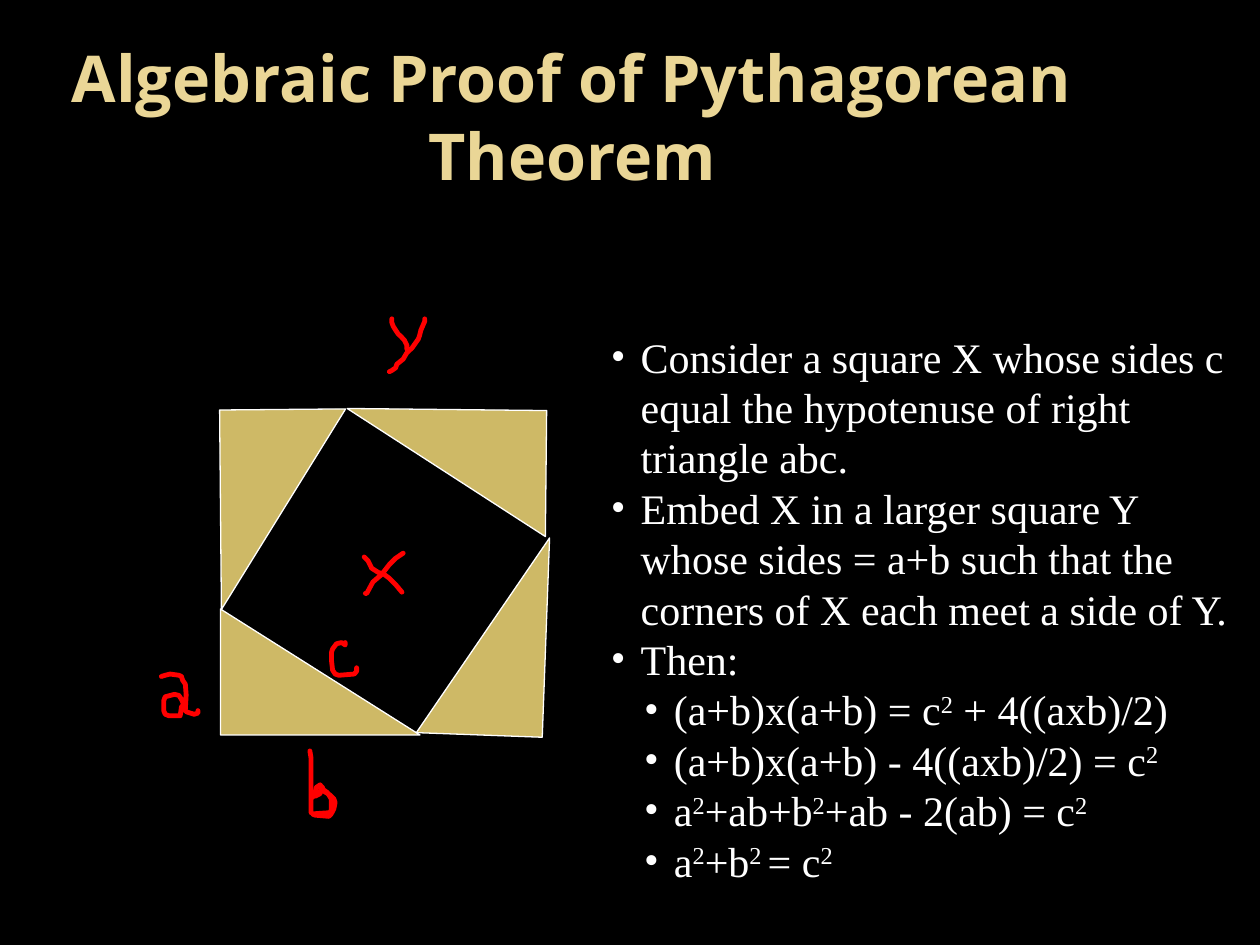
from pptx import Presentation
from pptx.dml.color import RGBColor
from pptx.enum.shapes import MSO_SHAPE as Shape
from pptx.enum.text import MSO_ANCHOR as Anchor, PP_ALIGN as Align
from pptx.oxml.ns import qn
from pptx.util import Pt
from lxml.etree import SubElement

COLORS = {"back": "000000", "title": "EAD696", "text": "FFFFFF",
          "triangle": "CEB966", "ink": "FF0000"}

TITLE = "Algebraic Proof of Pythagorean Theorem"
STEPS = [
    (0, "Consider a square X whose sides c equal the hypotenuse of right triangle abc."),
    (0, "Embed X in a larger square Y whose sides = a+b such that the corners of X each meet a side of Y."),
    (0, "Then:"),
    (1, "(a+b)x(a+b) = c|2| + 4((axb)/2)"),
    (1, "(a+b)x(a+b) - 4((axb)/2) = c|2"),
    (1, "a|2|+ab+b|2|+ab - 2(ab) = c|2"),
    (1, "a|2|+b|2 |= c|2"),
]
ANGLES = [0, 89.5, 180.6, 272.1]

LETTERS = {
    "X": (208.1, 316.1, [
        [(22.3, 0), (18, 2.9), (14.4, 6.5), (10, 12.2), (5, 16.5), (1.5, 23), (0.7, 23)],
        [(0, 2.2), (2.2, 4.3), (4.3, 8.6), (8, 11), (11.5, 12.2), (14.4, 14.4),
         (18, 18), (21.6, 22.3)]]),
    "c": (189.4, 367.2, [
        [(7.9, 0), (7.9, 1.4), (5.8, 0), (2.9, 0.7), (0.7, 3.6), (0, 5.8), (0, 10),
         (0.7, 15.8), (2.2, 18), (4.3, 18.7), (13, 18), (14.4, 16.5), (14.4, 14.4)]]),
    "b": (177.1, 429.1, [
        [(0, 0), (0.7, 4.3), (0.7, 35.3)],
        [(1.4, 26.6), (2.9, 24.5), (3.6, 20.9), (5.8, 19.4), (7.2, 20.9), (7.9, 23),
         (11.5, 25.2), (13.7, 27.4), (14.4, 29.5), (13.7, 33.1), (12.2, 36),
         (10.8, 37.4), (2.9, 36.7), (1.4, 36), (11.5, 35.3), (12.2, 33.8),
         (12.2, 27.4), (10, 23.8), (7.9, 22.3), (6.5, 21.6), (5.8, 24.5), (2.9, 25.9)]]),
    "a": (92.2, 385.2, [
        [(0, 1.4), (2.2, 0.7), (5, 0), (10, 0.7), (11.5, 1.4), (12.2, 3.6), (13.7, 5.8),
         (14.2, 12), (13.7, 20.2), (13, 18), (11.5, 14.4), (10, 12.2), (7.5, 11.6),
         (2.2, 13), (1.4, 15.1), (1.4, 21), (2.2, 23), (4.3, 23.8), (10.8, 23.8),
         (11.5, 18.7), (12.2, 18), (13, 20.2), (14.4, 21.6), (16.6, 22.3), (18.7, 23),
         (20.9, 22.3), (20.9, 20.9)]]),
    "y short": (222.5, 182.2, [
        [(1.4, 0), (1.4, 2.2), (2.2, 4.3), (3.6, 6.5), (5, 8.6), (6.5, 10),
         (8.6, 12.2), (10, 15.1), (10, 17.3)]]),
    "y long": (222.5, 182.2, [
        [(20.2, 0), (20.2, 1.4), (18, 6.5), (17.3, 9.4), (16.6, 11.5), (13, 16.6),
         (10, 19.4), (7.9, 23), (4.3, 25.9), (3.6, 28), (1.4, 29.5), (0, 30.2)]]),
}


def color(name):
    """Return the named colour."""
    return RGBColor.from_string(COLORS[name])


def set_font(para, face, size, name, bold=False):
    """Set the font of a paragraph and of the runs in it."""
    for part in (para, *para.runs):
        font = part.font
        font.name, font.size, font.bold = face, Pt(size), bold
        font.color.rgb = color(name)


def add_box(page, left, top, width, height):
    """Add a wrapping text box and return its frame."""
    frame = page.shapes.add_textbox(Pt(left), Pt(top), Pt(width), Pt(height)).text_frame
    frame.word_wrap = True
    return frame


def add_title(page, left, top, width, height):
    """Place the centred title."""
    frame = add_box(page, left, top, width, height)
    frame.vertical_anchor = Anchor.MIDDLE
    para = frame.paragraphs[0]
    para.text = TITLE
    para.alignment = Align.CENTER
    set_font(para, "Open Sans", 36.9, "title", True)


def add_bullet(para, level):
    """Give a paragraph a hanging bullet for its level."""
    para.level = level
    props = para._p.get_or_add_pPr()
    props.set("marL", str(Pt(17 + 19 * level)))
    props.set("indent", str(Pt(-17)))
    SubElement(props, qn("a:buFont")).set("typeface", "Times New Roman")
    SubElement(props, qn("a:buChar")).set("char", "•")


def add_steps(page, left, top, width, height):
    """Place the proof steps, raising every second piece between bars."""
    frame = add_box(page, left, top, width, height)
    frame.margin_top = Pt(3.2)
    for index, (level, text) in enumerate(STEPS):
        para = frame.add_paragraph() if index else frame.paragraphs[0]
        para.line_spacing = Pt(28.8)
        add_bullet(para, level)
        for order, piece in enumerate(text.split("|")):
            span = para.add_run()
            span.text = piece
            if order % 2:
                span._r.get_or_add_rPr().set("baseline", "30000")
        set_font(para, "Times New Roman", 24, "text")


def add_triangles(page, left, top, side):
    """Turn one right triangle around the centre of the large square."""
    width, height = 114, 72
    dx, dy = -36, 57
    for angle in ANGLES:
        triangle = page.shapes.add_shape(
            Shape.RIGHT_TRIANGLE,
            Pt(left + side / 2 + dx - width / 2), Pt(top + side / 2 + dy - height / 2),
            Pt(width), Pt(height))
        triangle.rotation = angle
        triangle.shadow.inherit = False
        triangle.fill.solid()
        triangle.fill.fore_color.rgb = color("triangle")
        triangle.line.color.rgb = color("text")
        triangle.line.width = Pt(0.75)
        dx, dy = -dy, dx


def add_letter(page, left, top, strokes):
    """Draw one handwritten letter as an open outline."""
    placed = [[(Pt(left + x), Pt(top + y)) for x, y in stroke] for stroke in strokes]
    builder = page.shapes.build_freeform(*placed[0][0])
    for index, (start, *rest) in enumerate(placed):
        if index:
            builder.move_to(*start)
        builder.add_line_segments(rest, close=False)
    letter = builder.convert_to_shape()
    letter.shadow.inherit = False
    letter.fill.background()
    letter.line.color.rgb = color("ink")
    letter.line.width = Pt(2.75)
    outline = letter.element.spPr.find(qn("a:ln"))
    outline.set("cap", "rnd")
    SubElement(outline, qn("a:round"))


def main():
    """Build and save the slide."""
    deck = Presentation()
    deck.slide_width, deck.slide_height = Pt(720), Pt(540)
    page = deck.slides.add_slide(deck.slide_layouts[6])
    page.background.fill.solid()
    page.background.fill.fore_color.rgb = color("back")
    add_title(page, 18, 24, 618, 84)
    add_steps(page, 342, 186, 378, 354)
    add_triangles(page, 126, 234, 186)
    for left, top, strokes in LETTERS.values():
        add_letter(page, left, top, strokes)
    deck.save("out.pptx")


if __name__ == "__main__":
    main()
